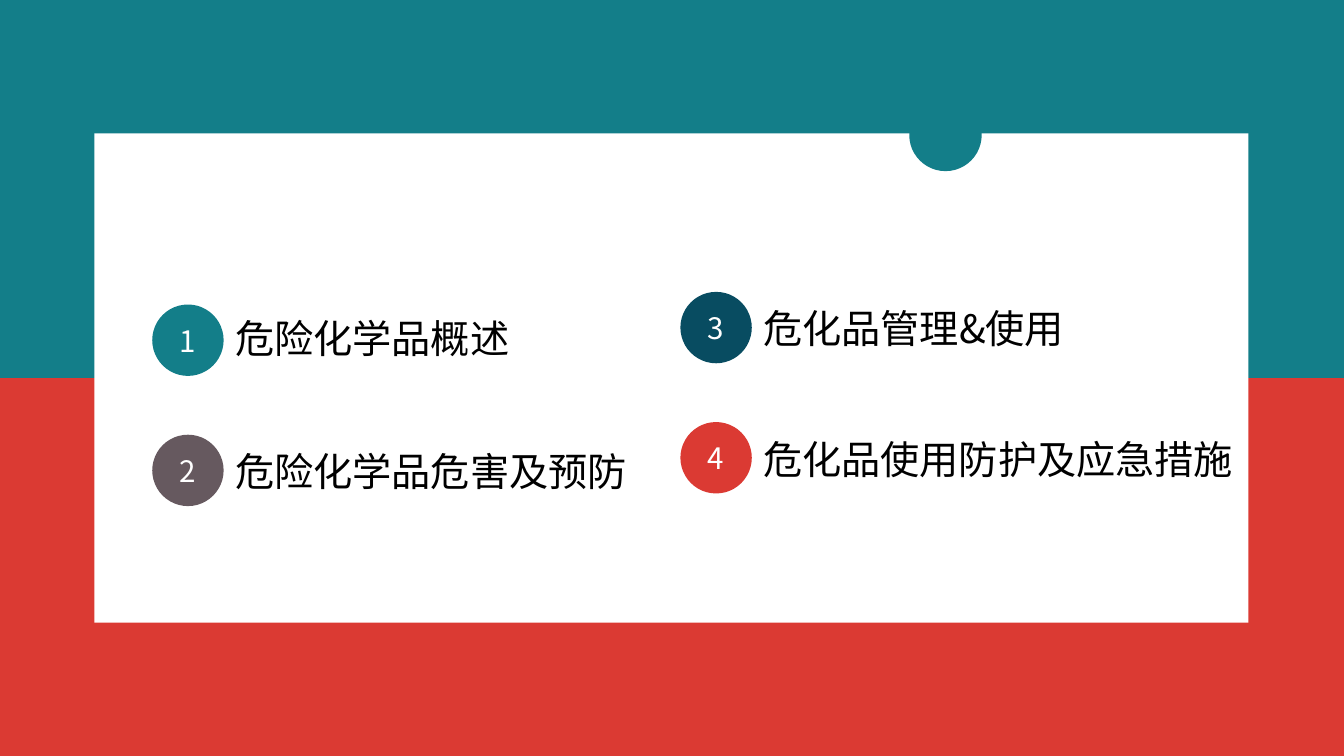
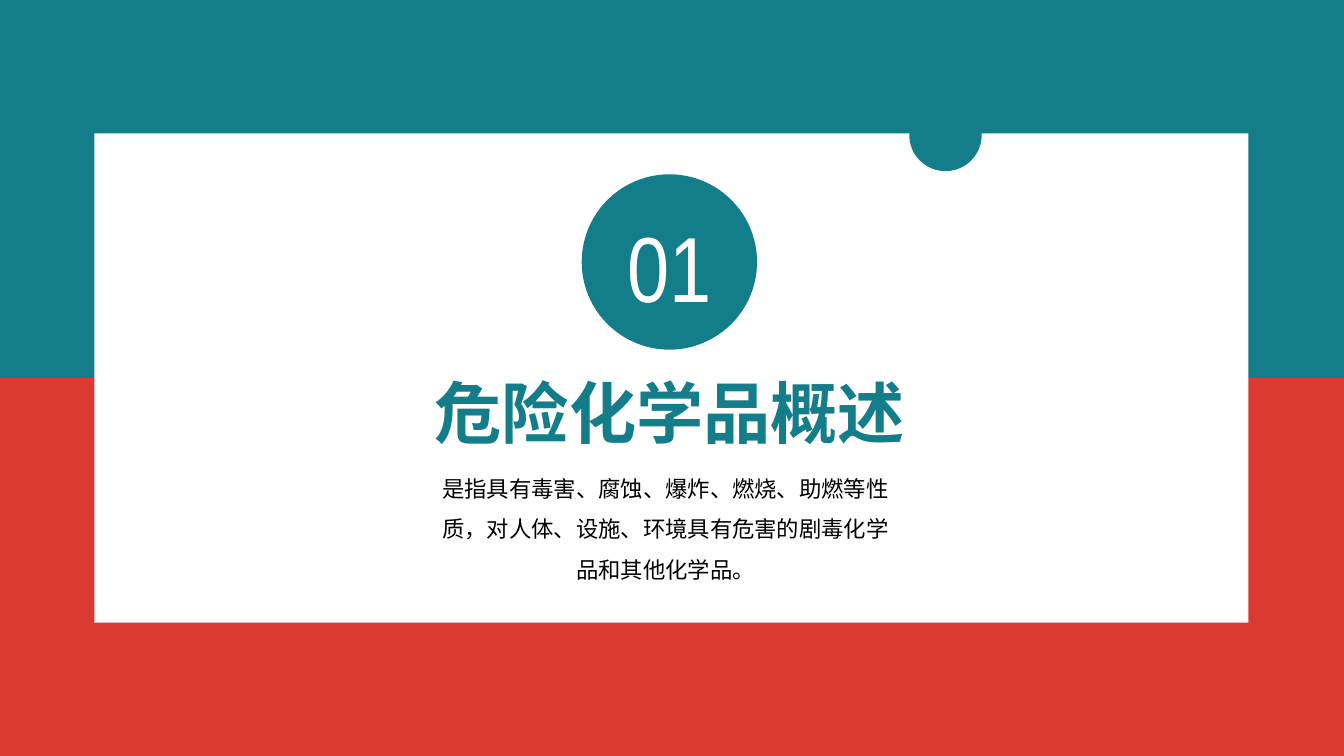
from dataclasses import dataclass

from lxml import etree
from pptx import Presentation
from pptx import util as u
from pptx.dml.color import RGBColor
from pptx.enum import shapes, text
from pptx.oxml import ns

PX = 9525
WIDTH, HEIGHT = 1280, 720
MID = HEIGHT // 2


@dataclass(frozen=True)
class Theme:
    teal: str = "137E89"
    red: str = "DB3A33"
    grey: str = "66595F"
    navy: str = "084C61"
    white: str = "FFFFFF"
    black: str = "000000"
    cjk: str = "Noto Sans CJK SC"
    sans: str = "Arial"
    narrow: str = "Arial Narrow"
    badge: float = 21.1
    label: float = 28
    number: float = 66
    title: float = 48
    body: float = 16
    leading: float = 29


class Deck:
    def __init__(self, theme):
        self.theme = theme
        self.prs = Presentation()
        self.prs.slide_width, self.prs.slide_height = u.Emu(WIDTH * PX), u.Emu(HEIGHT * PX)
        self.s = None

    def slide(self):
        t = self.theme
        self.s = self.prs.slides.add_slide(self.prs.slide_layouts[6])
        self.shape("RECTANGLE", (0, MID, WIDTH, MID), t.red)
        self.shape("RECTANGLE", (0, 0, WIDTH, MID), t.teal)
        self.shape("RECTANGLE", (90, 127, 1099, 466), t.white)
        self.shape("OVAL", (866, 94, 69, 69), t.teal)

    def shape(self, kind, box, color):
        sp = self.s.shapes.add_shape(shapes.MSO_SHAPE[kind], *(u.Emu(n * PX) for n in box))
        sp.shadow.inherit = False
        sp.fill.solid()
        sp.fill.fore_color.rgb = RGBColor.from_string(color)
        sp.line.fill.background()
        return sp

    def fill_text(self, sp, words, size, color, font, align="CENTER", inset=0, bold=False, leading=None):
        tf = sp.text_frame
        frame = dict.fromkeys(("margin_left", "margin_right", "margin_top", "margin_bottom"), u.Emu(inset * PX))
        frame |= {"word_wrap": True, "vertical_anchor": text.MSO_ANCHOR.MIDDLE}
        p = tf.paragraphs[0]
        r = p.add_run()
        r.text = words
        formats = (
            (tf, frame),
            (p, {"alignment": text.PP_ALIGN[align], "line_spacing": leading and u.Pt(leading)}),
            (r.font, {"name": font, "size": u.Pt(size), "bold": bold}),
        )
        for target, values in formats:
            for name, value in values.items():
                setattr(target, name, value)
        r.font.color.rgb = RGBColor.from_string(color)
        ea = etree.SubElement(r._r.get_or_add_rPr(), ns.qn("a:ea"))
        ea.set("typeface", self.theme.cjk)

    def text(self, box, words, size, color, font, **style):
        sp = self.s.shapes.add_textbox(*(u.Emu(n * PX) for n in box))
        self.fill_text(sp, words, size, color, font, **style)

    def entry(self, x, y, drop, number, words, color):
        t = self.theme
        badge = self.shape("OVAL", (x, y, 68, 68), color)
        self.fill_text(badge, str(number), t.badge, t.white, t.cjk)
        self.text((x + 79, y + drop, 463, 45), words, t.label, t.black, t.cjk, align="LEFT")

    def contents(self, columns):
        number = 0
        self.slide()
        for x, y, entries in columns:
            for row, (words, color, drop) in enumerate(entries):
                number += 1
                self.entry(x, y + row * 124, drop, number, words, color)

    def section(self, number, title, body):
        t = self.theme
        self.slide()
        self.shape("OVAL", (554, 166, 167, 167), t.teal)
        self.text((576, 195, 123, 116), number, t.number, t.white, t.narrow)
        self.text((397, 349, 482, 87), title, t.title, t.teal, t.sans, bold=True)
        self.text((403, 434, 462, 126), body, t.body, t.black, t.sans, inset=9, leading=t.leading)


def main():
    t = Theme()
    deck = Deck(t)
    deck.contents((
        (145, 290, (("危险化学品概述", t.teal, 9), ("危险化学品危害及预防", t.grey, 12))),
        (648, 278, (("危化品管理&使用", t.navy, 12), ("危化品使用防护及应急措施", t.red, 12))),
    ))
    deck.section(
        "01",
        "危险化学品概述",
        "是指具有毒害、腐蚀、爆炸、燃烧、助燃等性质，对人体、设施、环境具有危害的剧毒化学品和其他化学品。",
    )
    deck.prs.save("out.pptx")


if __name__ == "__main__":
    main()
